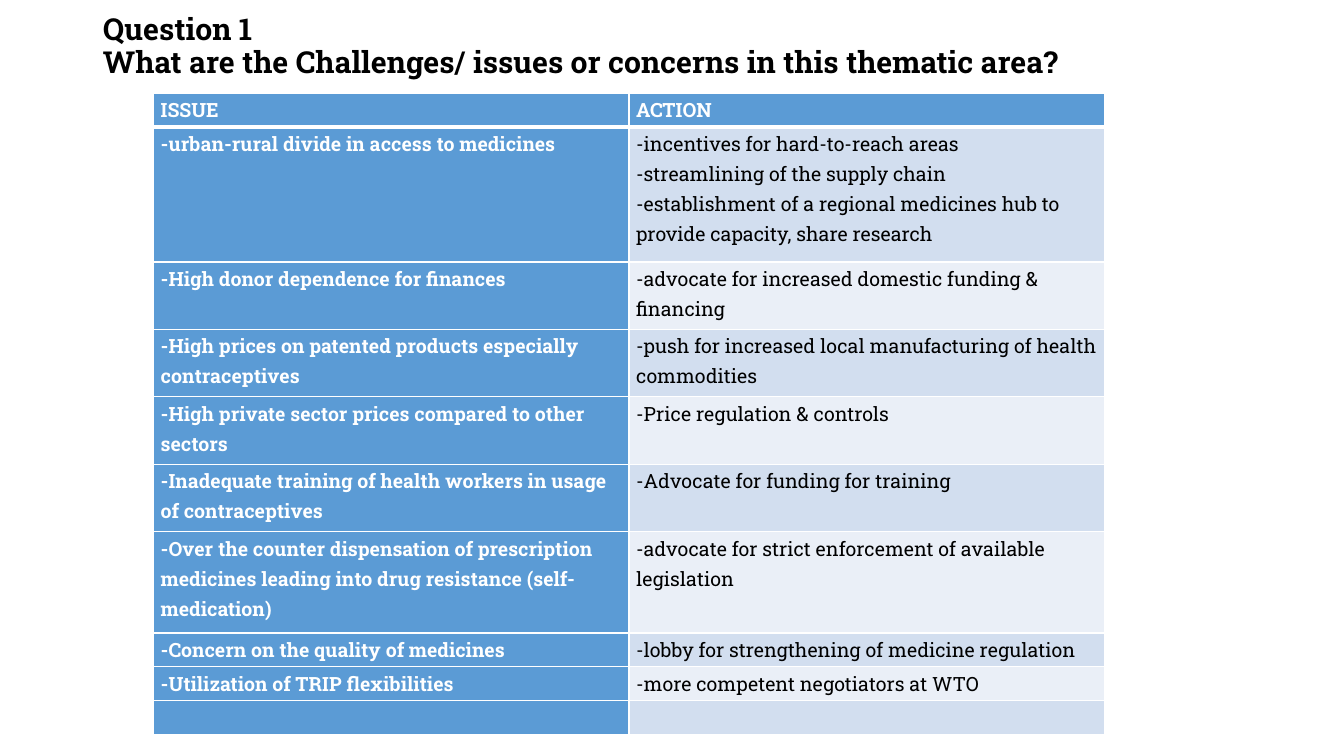
from dataclasses import dataclass

from lxml import etree
from pptx import Presentation
from pptx.dml.color import RGBColor
from pptx.enum.text import MSO_ANCHOR, MSO_AUTO_SIZE, PP_ALIGN
from pptx.oxml.ns import qn
from pptx.util import Cm, Pt

TITLE_ONLY = 5
LEFT = PP_ALIGN.LEFT
MIDDLE = MSO_ANCHOR.MIDDLE
TOP = MSO_ANCHOR.TOP
NO_AUTOFIT = MSO_AUTO_SIZE.NONE


@dataclass(frozen=True)
class Theme:
    font: str = "Roboto Slab"
    title_size: float = 21.6
    table_size: float = 14
    black: str = "000000"
    white: str = "FFFFFF"
    blue: str = "5B9BD5"
    bands: tuple[str, str] = ("D2DEEF", "EAEFF7")
    line_height: float = 0.85  # cm of row height for each line of text
    thin: float = 1
    thick: float = 3


@dataclass(frozen=True)
class Row:
    issue: str
    actions: tuple[str, ...]
    lines: int


THEME = Theme()
TITLE = "Question 1\vWhat are the Challenges/ issues or concerns in this thematic area?"
ROWS = (
    Row("ISSUE", ("ACTION",), 1),
    Row("-urban-rural divide in access to medicines",
        ("-incentives for hard-to-reach areas",
         "-streamlining of the supply chain",
         "-establishment of a regional medicines hub to provide capacity, share research"), 4),
    Row("-High donor dependence for finances",
        ("-advocate for increased domestic funding & financing",), 2),
    Row("-High prices on patented products especially contraceptives",
        ("-push for increased local manufacturing of health commodities",), 2),
    Row("-High private sector prices compared to other sectors",
        ("-Price regulation & controls",), 2),
    Row("-Inadequate training of health workers in usage of contraceptives",
        ("-Advocate for funding for training",), 2),
    Row("-Over the counter dispensation of prescription medicines leading into "
        "drug resistance (self-medication)",
        ("-advocate for strict enforcement of available legislation",), 3),
    Row("-Concern on the quality of medicines",
        ("-lobby for strengthening of medicine regulation",), 1),
    Row("-Utilization of TRIP flexibilities", ("-more competent negotiators at WTO",), 1),
    Row("", ("",), 1),
)


def format_paragraph(para, size: float, color: str, bold: bool, spacing: float) -> None:
    para.alignment = LEFT
    para.line_spacing = spacing
    para.font.name = THEME.font
    para.font.size = Pt(size)
    para.font.bold = bold
    para.font.color.rgb = RGBColor.from_string(color)


def add_title(slide) -> None:
    title = slide.shapes.title
    title.left, title.top, title.width, title.height = Cm(2.34), Cm(0.53), Cm(29.21), Cm(2.16)
    frame = title.text_frame
    frame.text = TITLE
    frame.word_wrap = True
    frame.auto_size = NO_AUTOFIT
    frame.vertical_anchor = MIDDLE
    frame.margin_bottom = Cm(0.97)  # lifts the two lines clear of the table
    format_paragraph(frame.paragraphs[0], THEME.title_size, THEME.black, True, 0.9)


def set_borders(cell, top: float, bottom: float) -> None:
    properties = cell._tc.get_or_add_tcPr()
    widths = {"a:lnL": THEME.thin, "a:lnR": THEME.thin, "a:lnT": top, "a:lnB": bottom}
    for position, (tag, width) in enumerate(widths.items()):
        line = etree.Element(qn(tag), w=str(Pt(width)))
        fill = etree.SubElement(line, qn("a:solidFill"))
        etree.SubElement(fill, qn("a:srgbClr"), val=THEME.white)
        properties.insert(position, line)


def fill_cell(cell, texts: tuple[str, ...], fill: str, strong: bool) -> None:
    cell.fill.solid()
    cell.fill.fore_color.rgb = RGBColor.from_string(fill)
    cell.margin_left = cell.margin_right = Cm(0.18)
    cell.margin_top = cell.margin_bottom = 0
    cell.vertical_anchor = TOP
    cell.text = "\n".join(texts)
    color = THEME.white if strong else THEME.black
    for para in cell.text_frame.paragraphs:
        format_paragraph(para, THEME.table_size, color, strong, 1.15)


def add_issue_table(slide) -> None:
    height = sum(row.lines for row in ROWS) * THEME.line_height
    frame = slide.shapes.add_table(len(ROWS), 2, Cm(3.87), Cm(2.35), Cm(23.96), Cm(height))
    table = frame.table
    for index, row in enumerate(ROWS):
        table.rows[index].height = Cm(row.lines * THEME.line_height)
        header = index == 0
        action_fill = THEME.blue if header else THEME.bands[(index - 1) % 2]
        issue, action = table.cell(index, 0), table.cell(index, 1)
        fill_cell(issue, (row.issue,), THEME.blue, True)
        fill_cell(action, row.actions, action_fill, header)
        for cell in (issue, action):
            set_borders(cell,
                        top=THEME.thick if index == 1 else THEME.thin,
                        bottom=THEME.thick if header else THEME.thin)


def main() -> None:
    deck = Presentation()
    deck.slide_width, deck.slide_height = Cm(33.87), Cm(19.05)
    page = deck.slides.add_slide(deck.slide_layouts[TITLE_ONLY])
    add_title(page)
    add_issue_table(page)
    deck.save("out.pptx")


if __name__ == "__main__":
    main()
